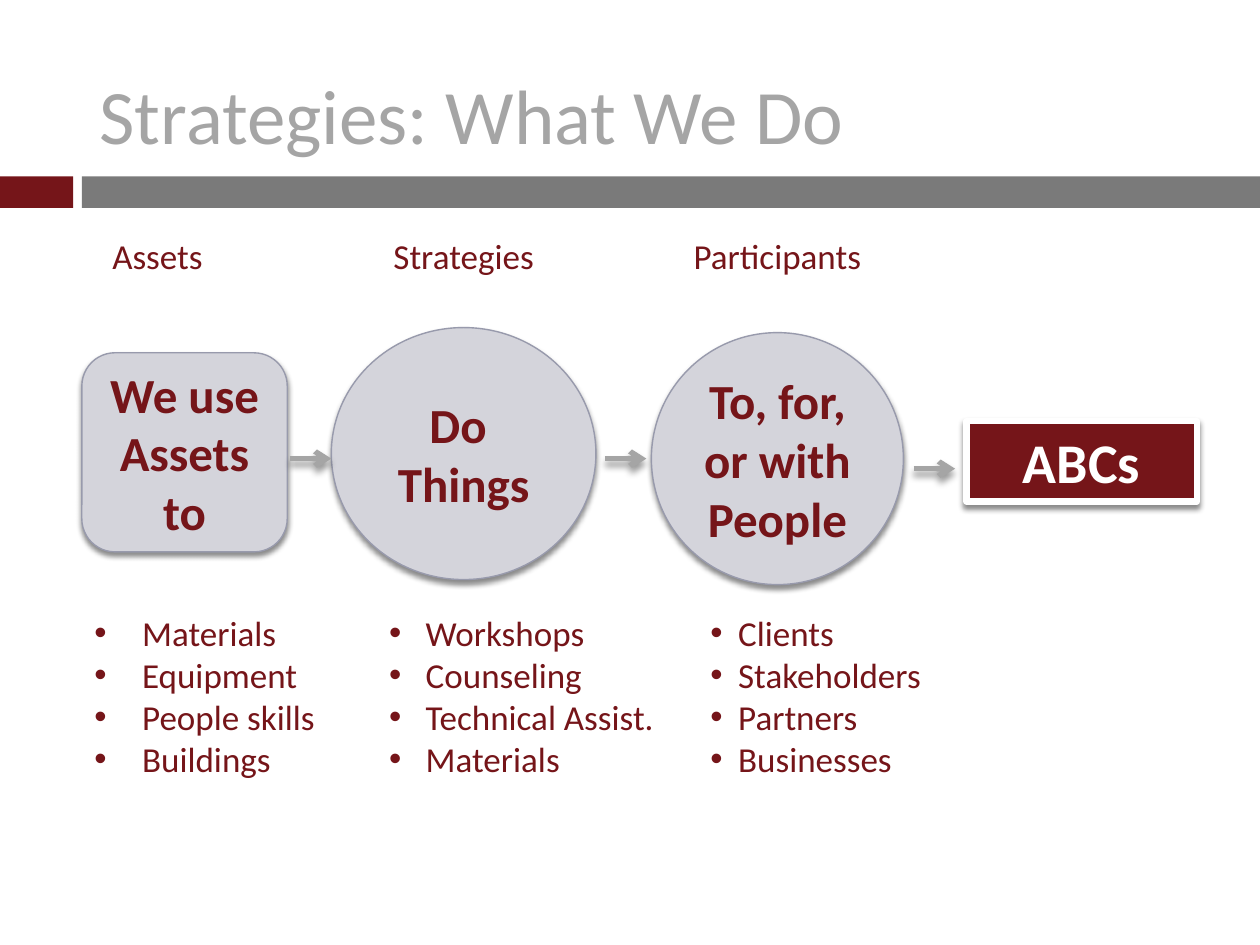
from lxml import etree
from pptx import Presentation
from pptx import util as u
from pptx.dml.color import RGBColor
from pptx.enum import shapes, text
from pptx.oxml import ns

COLORS = {
    "maroon": "751519",
    "bar": "7A7A7A",
    "gray": "A5A5A5",
    "pale": "D4D4DB",
    "edge": "989AAC",
    "white": "FFFFFF",
    "shadow": "000000",
}
FONT = "Calibri"
COLUMNS = [
    ("Assets", (0.2, 1.81, 2.1, 0.44), (0.65, 4.8, 2.5, 1.45), 0.38,
     ["Materials", "Equipment", "People skills", "Buildings"]),
    ("Strategies", (2.63, 1.81, 2.1, 0.44), (2.99, 4.8, 2.5, 1.45), 0.29,
     ["Workshops", "Counseling", "Technical Assist.", "Materials"]),
    ("Participants", (4.92, 1.81, 2.5, 0.44), (5.54, 4.8, 2, 1.45), 0.22,
     ["Clients", "Stakeholders", "Partners", "Businesses"]),
]
STEPS = [
    (shapes.MSO_SHAPE.ROUNDED_RECTANGLE, (0.65, 2.8, 1.63, 1.58), ["We use Assets to"]),
    (shapes.MSO_SHAPE.OVAL, (2.63, 2.6, 2.1, 2), ["Do ", "Things"]),
    (shapes.MSO_SHAPE.OVAL, (5.17, 2.64, 2, 2), ["To, for, or with People"]),
]
ARROWS = [(2.3, 3.64), (4.8, 3.64), (7.25, 3.72)]
ARROW_LENGTH = 0.33


def color(name):
    return RGBColor.from_string(COLORS[name])


def inches(box):
    return [u.Inches(length) for length in box]


def add_element(parent, tag, **attributes):
    return etree.SubElement(parent, ns.qn(tag), attributes)


def add_shadow(properties, blur, distance, alpha):
    effects = properties.find(ns.qn("a:effectLst"))
    if effects is None:
        effects = add_element(properties, "a:effectLst")
    shadow = add_element(effects, "a:outerShdw", blurRad=str(u.Pt(blur)),
                         dist=str(u.Pt(distance)), dir="5400000", rotWithShape="0")
    tint = add_element(shadow, "a:srgbClr", val=COLORS["shadow"])
    add_element(tint, "a:alpha", val=str(alpha * 1000))


def write(frame, lines, size, tint, align, bold=False):
    frame.word_wrap = True
    for index, line in enumerate(lines):
        para = frame.paragraphs[0] if index == 0 else frame.add_paragraph()
        para.text = line
        para.alignment = align
        para.font.name = FONT
        para.font.size = u.Pt(size)
        para.font.bold = bold
        para.font.color.rgb = color(tint)


def add_block(page, kind, box, fill, edge=None, width=0):
    block = page.shapes.add_shape(kind, *inches(box))
    block.shadow.inherit = False
    block.fill.solid()
    block.fill.fore_color.rgb = color(fill)
    if edge:
        block.line.color.rgb = color(edge)
        block.line.width = u.Pt(width)
        add_shadow(block._element.spPr, 3, 2.4, 45)
    else:
        block.line.fill.background()
    return block


def add_header(page, box):
    left, top, width, height = box
    title = page.shapes.title
    title.left, title.top, title.width, title.height = inches((0.69, 0.45, 8.62, 0.91))
    title.text_frame.vertical_anchor = text.MSO_ANCHOR.MIDDLE
    write(title.text_frame, ["Strategies: What We Do"], 44, "gray", text.PP_ALIGN.LEFT)
    accent, start = 0.58, 0.65
    add_block(page, shapes.MSO_SHAPE.RECTANGLE, (left, top, accent, height), "maroon")
    add_block(page, shapes.MSO_SHAPE.RECTANGLE,
              (left + start, top, width - start, height), "bar")


def add_step(page, kind, box, lines):
    step = add_block(page, kind, box, "pale", "edge", 0.79)
    step.text_frame.vertical_anchor = text.MSO_ANCHOR.MIDDLE
    write(step.text_frame, lines, 28, "maroon", text.PP_ALIGN.CENTER, True)


def add_outcome(page, box):
    outcome = add_block(page, shapes.MSO_SHAPE.RECTANGLE, box, "maroon", "white", 3.75)
    outcome.text_frame.vertical_anchor = text.MSO_ANCHOR.TOP
    write(outcome.text_frame, ["ABCs"], 32, "white", text.PP_ALIGN.CENTER, True)


def add_arrow(page, left, top):
    arrow = page.shapes.add_connector(
        shapes.MSO_CONNECTOR.STRAIGHT, *inches((left, top, left + ARROW_LENGTH, top)))
    arrow.line.color.rgb = color("gray")
    arrow.line.width = u.Pt(3)
    add_element(arrow.line._get_or_add_ln(), "a:tailEnd", type="arrow")
    add_shadow(arrow._element.spPr, 4, 3, 40)


def add_heading(page, box, heading):
    frame = page.shapes.add_textbox(*inches(box)).text_frame
    write(frame, [heading], 20, "maroon", text.PP_ALIGN.CENTER)


def add_bullets(page, box, items, indent):
    frame = page.shapes.add_textbox(*inches(box)).text_frame
    write(frame, items, 20, "maroon", text.PP_ALIGN.LEFT)
    for para in frame.paragraphs:
        properties = para._p.get_or_add_pPr()
        properties.set("marL", str(u.Inches(indent)))
        properties.set("indent", str(-u.Inches(indent)))
        bullet_font = etree.Element(ns.qn("a:buFont"), typeface="Arial")
        bullet = etree.Element(ns.qn("a:buChar"), char="•")
        properties.insert(0, bullet_font)
        properties.insert(1, bullet)


def main():
    deck = Presentation()
    deck.slide_width, deck.slide_height = inches((10, 7.5))
    page = deck.slides.add_slide(deck.slide_layouts.get_by_name("Title Only"))
    add_header(page, (0, 1.4, 10, 0.25))
    for kind, box, lines in STEPS:
        add_step(page, kind, box, lines)
    add_outcome(page, (7.67, 3.34, 1.83, 0.64))
    for left, top in ARROWS:
        add_arrow(page, left, top)
    for heading, heading_box, list_box, indent, items in COLUMNS:
        add_heading(page, heading_box, heading)
        add_bullets(page, list_box, items, indent)
    deck.save("out.pptx")


if __name__ == "__main__":
    main()
